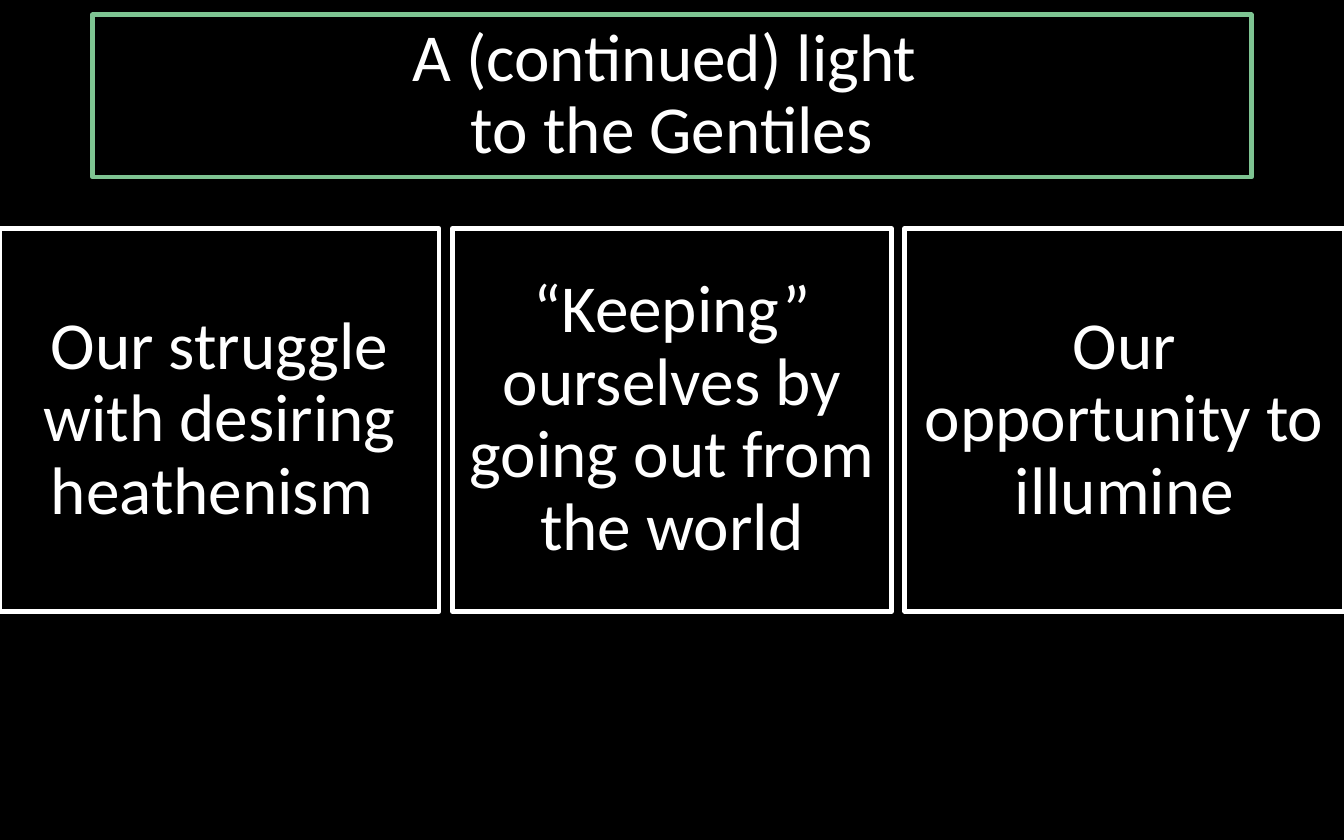
from dataclasses import dataclass

from pptx import Presentation
from pptx.dml.color import RGBColor
from pptx.enum.shapes import MSO_SHAPE
from pptx.enum.text import MSO_ANCHOR, PP_ALIGN
from pptx.util import Cm, Pt

# Content: a vertical tab is a line break within the paragraph
HEADING = "A (continued) light \vto the Gentiles"
POINTS = [
    # text, space before in points
    ("Our struggle with desiring heathenism ", 7.5),
    ("“Keeping” ourselves by going out from the world", 7.5),
    ("Our opportunity to illumine", 0),
]


@dataclass(frozen=True)
class Theme:
    background: RGBColor = RGBColor(0x00, 0x00, 0x00)
    text: RGBColor = RGBColor(0xFF, 0xFF, 0xFF)
    heading_border: RGBColor = RGBColor(0x7E, 0xC4, 0x92)
    point_border: RGBColor = RGBColor(0xFF, 0xFF, 0xFF)
    font: str = "Calibri"
    size: Pt = Pt(36)
    border_width: Pt = Pt(2.5)
    line_spacing: float = 0.9


THEME = Theme()

# Layout in centimetres
SLIDE_WIDTH, SLIDE_HEIGHT = 25.4, 15.88
HEADING_TOP, HEADING_WIDTH, HEADING_HEIGHT = 0.28, 21.9, 3.07
POINT_TOP, POINT_HEIGHT, POINT_GAP = 4.32, 7.24, 0.25


def add_panel(slide, text, left, top, width, height, border, space_before=0):
    panel = slide.shapes.add_shape(
        MSO_SHAPE.RECTANGLE, Cm(left), Cm(top), Cm(width), Cm(height))
    panel.shadow.inherit = False
    panel.fill.background()
    panel.line.color.rgb = border
    panel.line.width = THEME.border_width

    frame = panel.text_frame
    frame.word_wrap = True
    frame.vertical_anchor = MSO_ANCHOR.MIDDLE
    paragraph = frame.paragraphs[0]
    paragraph.text = text
    paragraph.alignment = PP_ALIGN.CENTER
    paragraph.line_spacing = THEME.line_spacing
    paragraph.space_before = Pt(space_before)
    for run in paragraph.runs:
        run.font.name = THEME.font
        run.font.size = THEME.size
        run.font.color.rgb = THEME.text


def main():
    deck = Presentation()
    deck.slide_width, deck.slide_height = Cm(SLIDE_WIDTH), Cm(SLIDE_HEIGHT)
    slide = deck.slides.add_slide(deck.slide_layouts[6])
    slide.background.fill.solid()
    slide.background.fill.fore_color.rgb = THEME.background

    # Heading, centred across the slide
    add_panel(slide, HEADING, (SLIDE_WIDTH - HEADING_WIDTH) / 2, HEADING_TOP,
              HEADING_WIDTH, HEADING_HEIGHT, THEME.heading_border)

    # Points, sharing the full slide width equally
    count = len(POINTS)
    point_width = (SLIDE_WIDTH - (count - 1) * POINT_GAP) / count
    for column, (point, space_before) in enumerate(POINTS):
        add_panel(slide, point, column * (point_width + POINT_GAP), POINT_TOP,
                  point_width, POINT_HEIGHT, THEME.point_border, space_before)

    deck.save("out.pptx")


if __name__ == "__main__":
    main()
